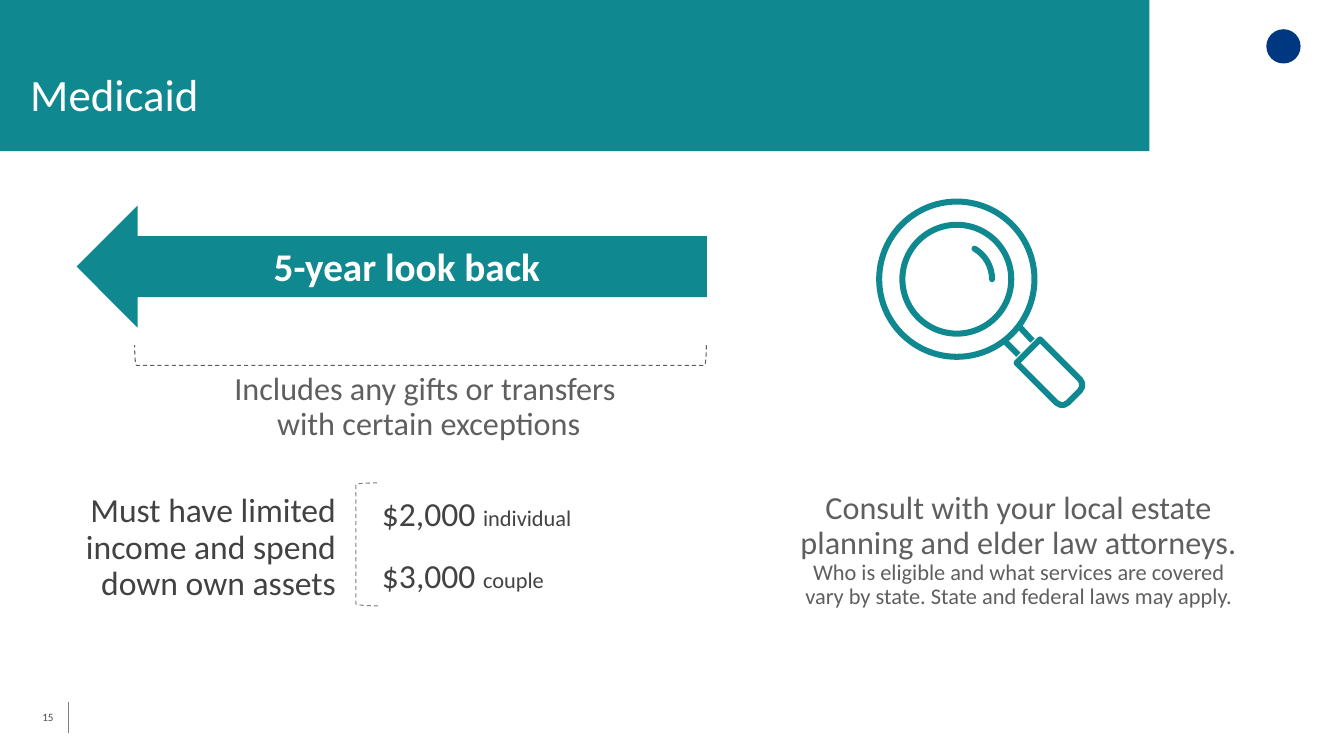
from dataclasses import dataclass
from typing import Any, Optional

import pptx
import pptx.dml.color
import pptx.enum.dml
import pptx.enum.shapes
import pptx.enum.text
import pptx.oxml.ns
import pptx.util
from lxml import etree

Inches = pptx.util.Inches
RGBColor = pptx.dml.color.RGBColor
MSO_SHAPE = pptx.enum.shapes.MSO_SHAPE
ALIGN = pptx.enum.text.PP_ALIGN
ANCHOR = pptx.enum.text.MSO_ANCHOR
DASH = pptx.enum.dml.MSO_LINE.DASH

TEAL = RGBColor(0x0F, 0x89, 0x8F)
NAVY = RGBColor(0x00, 0x37, 0x81)
WHITE = RGBColor(0xFF, 0xFF, 0xFF)
DARK = RGBColor(0x42, 0x42, 0x42)
NUMBER_GRAY = RGBColor(0x4D, 0x4D, 0x4D)
GRAY = RGBColor(0x5F, 0x5F, 0x5F)
RULE_GRAY = RGBColor(0x80, 0x80, 0x80)
FONT = "Calibri"
STROKE = 4.3

Box = tuple[float, float, float, float]
Span = tuple[str, float]


@dataclass
class Figure:
    kind: MSO_SHAPE
    box: Box
    fill: Optional[RGBColor] = None
    line: Optional[RGBColor] = None
    weight: float = 0.75
    dash: Optional[DASH] = None
    rotation: float = 0
    adjustments: tuple[float, ...] = ()


@dataclass
class Label:
    box: Box
    paragraphs: list[list[Span]]
    color: RGBColor
    align: ALIGN = ALIGN.LEFT
    bold: bool = False


@dataclass
class Rule:
    start: tuple[float, float]
    end: tuple[float, float]
    color: RGBColor
    weight: float


def set_all(target: Any, values: dict[str, Any]) -> None:
    for name, value in values.items():
        setattr(target, name, value)


def write(tf: Any, label: Label, para_format: dict[str, Any]) -> None:
    for i, spans in enumerate(label.paragraphs):
        p = tf.add_paragraph() if i else tf.paragraphs[0]
        set_all(p, {"alignment": label.align, **para_format})
        for text, size in spans:
            for j, part in enumerate(text.split("\n")):
                if j:
                    p.add_line_break()
                r = p.add_run()
                r.text = part
                set_all(r.font, {"name": FONT, "size": pptx.util.Pt(size), "bold": label.bold})
                r.font.color.rgb = label.color


def add_figure(s: Any, figure: Figure) -> Any:
    sp = s.shapes.add_shape(figure.kind, *map(Inches, figure.box))
    sp.shadow.inherit = False
    sp.rotation = figure.rotation
    for i, value in enumerate(figure.adjustments):
        sp.adjustments[i] = value
    if figure.fill is None:
        sp.fill.background()
    else:
        sp.fill.solid()
        sp.fill.fore_color.rgb = figure.fill
    if figure.line is None:
        sp.line.fill.background()
    else:
        sp.line.color.rgb = figure.line
        set_all(sp.line, {"width": pptx.util.Pt(figure.weight), "dash_style": figure.dash})
    return sp


def add_label(s: Any, label: Label) -> Any:
    sp = s.shapes.add_textbox(*map(Inches, label.box))
    tf = sp.text_frame
    tf.word_wrap = True
    write(tf, label, {"line_spacing": 0.9})
    return tf


def add_rule(s: Any, rule: Rule) -> None:
    line = s.shapes.add_connector(
        pptx.enum.shapes.MSO_CONNECTOR.STRAIGHT, *map(Inches, rule.start + rule.end))
    line.line.color.rgb = rule.color
    line.line.width = pptx.util.Pt(rule.weight)
    etree.SubElement(line._element.spPr, pptx.oxml.ns.qn("a:effectLst"))


def ring(kind: MSO_SHAPE, radius: float, adjustments: tuple[float, ...] = ()) -> Figure:
    cx, cy = 9.49, 2.77
    return Figure(kind, (cx - radius, cy - radius, 2 * radius, 2 * radius),
                  line=TEAL, weight=STROKE, adjustments=adjustments)


def add_magnifier(s: Any) -> None:
    for start, end in (((10.11, 3.24), (10.24, 3.38)), ((9.97, 3.39), (10.1, 3.52))):
        add_rule(s, Rule(start, end, TEAL, STROKE))
    add_figure(s, ring(MSO_SHAPE.OVAL, 0.77))
    add_figure(s, ring(MSO_SHAPE.OVAL, 0.54))
    glint = add_figure(s, ring(MSO_SHAPE.ARC, 0.35, (180, -90)))
    glint.line._ln.set("cap", "rnd")
    add_figure(s, Figure(MSO_SHAPE.ROUND_2_SAME_RECTANGLE, (10.26, 3.39, 0.33, 0.64),
                         line=TEAL, weight=STROKE, rotation=135, adjustments=(0.25, 0)))


FIGURES = [
    Figure(MSO_SHAPE.OVAL, (12.56, 0.29, 0.34, 0.34), fill=NAVY),
    Figure(MSO_SHAPE.LEFT_ARROW, (0.76, 2.04, 6.25, 1.21), fill=TEAL),
    Figure(MSO_SHAPE.RIGHT_BRACKET, (4.07, 0.69, 0.2, 5.67), line=GRAY,
           dash=DASH.DASH, rotation=90),
    Figure(MSO_SHAPE.RIGHT_BRACKET, (3.53, 4.79, 0.22, 1.22), line=RULE_GRAY,
           dash=DASH.DASH, rotation=180),
]

LABELS = [
    Label((2.57, 2.41, 2.93, 0.54), [[("5-year look back", 28)]], WHITE, ALIGN.CENTER, True),
    Label((1.67, 3.65, 5.17, 0.81),
          [[("Includes any gifts or transfers \nwith certain exceptions", 23)]],
          GRAY, ALIGN.CENTER),
    Label((0.72, 4.85, 2.71, 1.46),
          [[("Must have limited income and spend down own assets", 24)]], DARK, ALIGN.RIGHT),
    Label((3.69, 4.89, 2.3, 0.35), [[("$2,000 ", 24), ("individual", 16)]], DARK),
    Label((3.69, 5.5, 2.01, 0.43), [[("$3,000 ", 24), ("couple", 16)]], DARK),
    Label((7.82, 4.83, 4.57, 1.34),
          [[("Consult with your local estate planning and elder law attorneys.", 23)],
           [("Who is eligible and what services are covered vary by state. "
             "State and federal laws may apply.", 16)]], GRAY, ALIGN.CENTER),
]


def main() -> None:
    prs = pptx.Presentation()
    set_all(prs, {"slide_width": Inches(13.33), "slide_height": Inches(7.5)})
    s = prs.slides.add_slide(prs.slide_layouts[6])

    banner = Figure(MSO_SHAPE.RECTANGLE, (0, 0, 11.4, 1.5), fill=TEAL)
    tf = add_figure(s, banner).text_frame
    margins = ("margin_left", "margin_top", "margin_right", "margin_bottom")
    set_all(tf, {"vertical_anchor": ANCHOR.BOTTOM, "word_wrap": True,
                 **dict.fromkeys(margins, Inches(0.3))})
    write(tf, Label(banner.box, [[("Medicaid", 32)]], WHITE),
          {"space_before": pptx.util.Pt(6)})

    add_rule(s, Rule((0.68, 6.96), (0.68, 7.27), RULE_GRAY, 0.75))
    tf = add_label(s, Label((0.42, 6.92, 0.4, 0.4), [[("15", 8)]], NUMBER_GRAY))
    set_all(tf, {"vertical_anchor": ANCHOR.MIDDLE, "margin_left": 0, "margin_right": 0})

    for figure in FIGURES:
        add_figure(s, figure)
    for label in LABELS:
        add_label(s, label)
    add_magnifier(s)
    prs.save("out.pptx")


if __name__ == "__main__":
    main()
